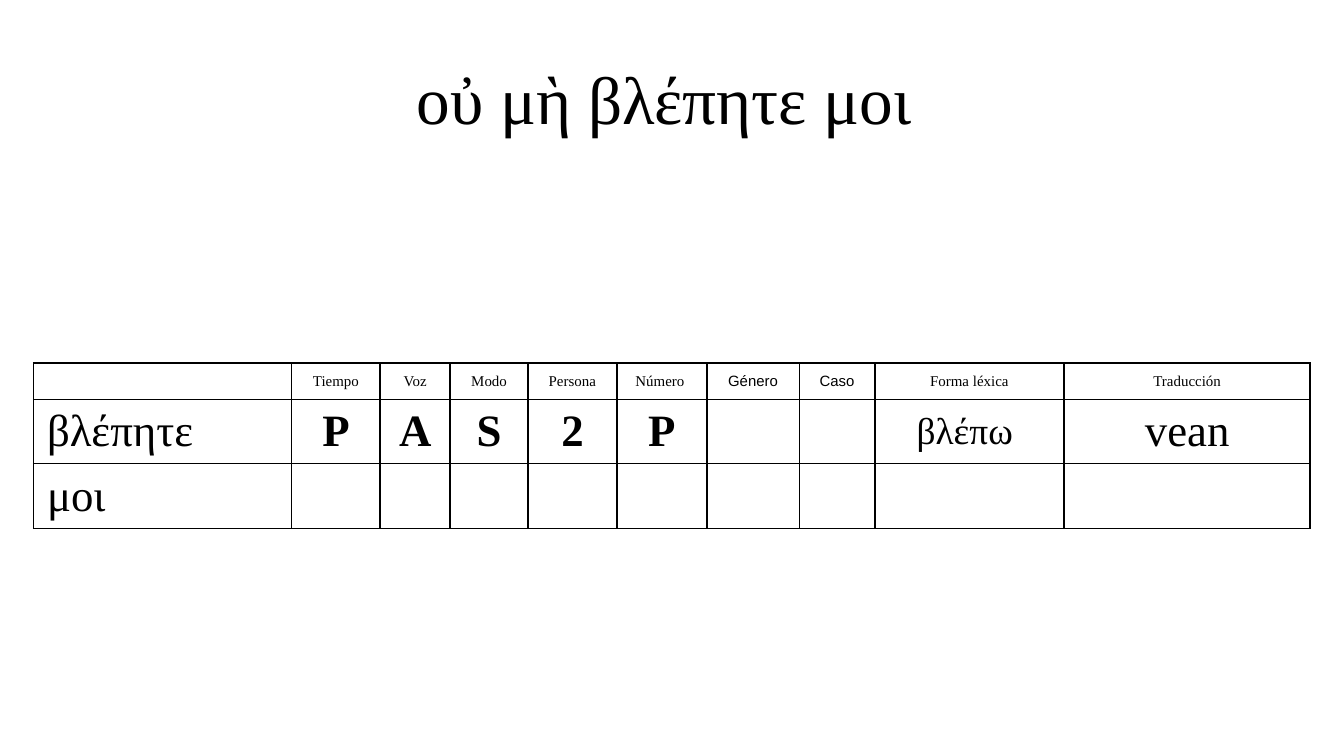
from dataclasses import dataclass

from lxml import etree
from pptx import Presentation
from pptx.dml.color import RGBColor
from pptx.enum import text as t
from pptx.oxml import ns
from pptx.util import Inches, Pt

BLACK = RGBColor(0x00, 0x00, 0x00)
SERIF = "Times New Roman"
SANS = "Arial"
CENTER = t.PP_ALIGN.CENTER
LEFT = t.PP_ALIGN.LEFT


@dataclass(frozen=True)
class Entry:
    text: str = ""
    size: float = 24
    font: str = SERIF
    bold: bool = False
    align: t.PP_ALIGN = CENTER
    side_inset: float = 0.1


def write(frame, content: str, *, size: float, font: str = SERIF,
          bold: bool = False, align: t.PP_ALIGN = CENTER) -> None:
    paragraph = frame.paragraphs[0]
    paragraph.alignment = align
    if not content:
        end = etree.SubElement(paragraph._p, ns.qn("a:endParaRPr"))
        end.set("sz", str(int(size * 100)))
        return
    run = paragraph.add_run()
    run.text = content
    run.font.size = Pt(size)
    run.font.name = font
    run.font.bold = bold
    run.font.color.rgb = BLACK


def add_border(cell, side: str, width: float) -> None:
    line = etree.SubElement(cell._tc.get_or_add_tcPr(), ns.qn(f"a:ln{side}"))
    line.set("w", str(Pt(width)))
    fill = etree.SubElement(line, ns.qn("a:solidFill"))
    etree.SubElement(fill, ns.qn("a:srgbClr")).set("val", str(BLACK))


def fill_cell(cell, entry: Entry, is_header: bool) -> None:
    widths = {"L": 1, "R": 1, "T": 1 if is_header else 0.75, "B": 0.75}
    for side, width in widths.items():
        add_border(cell, side, width)
    cell.fill.background()
    cell.vertical_anchor = t.MSO_ANCHOR.MIDDLE
    cell.margin_left = cell.margin_right = Inches(entry.side_inset)
    cell.margin_top = cell.margin_bottom = Inches(0.04)
    write(cell.text_frame, entry.text, size=entry.size, font=entry.font,
          bold=entry.bold, align=entry.align)


def add_parsing_table(slide, rows: list[list[Entry]]) -> None:
    column_widths = [1.92, 0.66, 0.52, 0.58, 0.66, 0.67, 0.69, 0.56, 1.41, 1.83]
    row_heights = [0.27, 0.47, 0.48]
    table = slide.shapes.add_table(
        len(rows), len(column_widths), Inches(0.25), Inches(2.7),
        Inches(sum(column_widths)), Inches(sum(row_heights))).table
    table.first_row = False
    table.horz_banding = False
    for column, width in zip(table.columns, column_widths):
        column.width = Inches(width)
    for row, height in zip(table.rows, row_heights):
        row.height = Inches(height)
    for r, entries in enumerate(rows):
        for c, entry in enumerate(entries):
            fill_cell(table.cell(r, c), entry, is_header=r == 0)


def add_title(slide, phrase: str) -> None:
    title = slide.shapes.title
    title.left, title.top = Inches(0.17), Inches(0.37)
    title.width, title.height = Inches(9.67), Inches(0.71)
    frame = title.text_frame
    frame.word_wrap = True
    frame.auto_size = t.MSO_AUTO_SIZE.SHAPE_TO_FIT_TEXT
    frame.vertical_anchor = t.MSO_ANCHOR.MIDDLE
    write(frame, phrase, size=36)


def main() -> None:
    deck = Presentation()
    deck.slide_width = Inches(10)
    deck.slide_height = deck.slide_width * 9 // 16
    slide = deck.slides.add_slide(deck.slide_layouts[5])
    add_title(slide, "οὐ μὴ βλέπητε μοι ")

    labels = ["", "Tiempo", "Voz", "Modo", "Persona", "Número ",
              "Género", "Caso", "Forma léxica", "Traducción"]
    header = [Entry(label, 8, SANS if label in ("Género", "Caso") else SERIF)
              for label in labels]
    codes = [Entry(code, bold=True, side_inset=0 if code == "A" else 0.1)
             for code in "PAS2P"]
    verb = [Entry("βλέπητε", align=LEFT), *codes, Entry(), Entry(),
            Entry("βλέπω ", 20), Entry("vean")]
    pronoun = [Entry("μοι", align=LEFT)] + [Entry()] * (len(labels) - 1)
    add_parsing_table(slide, [header, verb, pronoun])
    deck.save("out.pptx")


if __name__ == "__main__":
    main()
